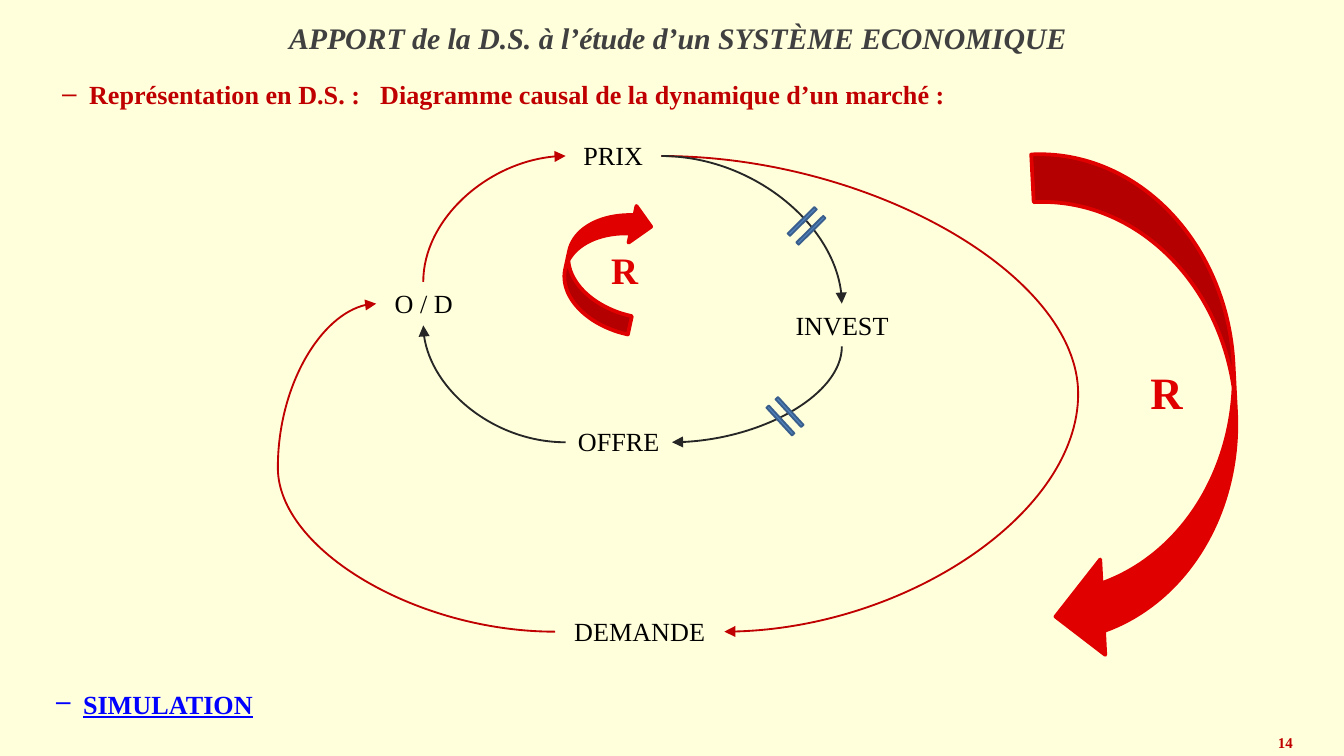
"""Build the slide showing the causal loop diagram of a market."""
from dataclasses import dataclass

from lxml import etree
from pptx import Presentation
from pptx import util as u
from pptx.dml.color import RGBColor
from pptx.enum import shapes, text
from pptx.oxml.ns import qn

FONT = "Times New Roman"
COLORS = {
    "background": "FFFFDC",
    "title": "404040",
    "red": "C00000",
    "loop": "E10000",
    "black": "000000",
    "dark": "262626",
    "link": "0000FF",
    "delay": "4F81BD",
    "delay_line": "3A5F8C",
}


@dataclass
class Box:
    left: float
    top: float
    width: float
    height: float

    def lengths(self):
        return [u.Cm(v) for v in (self.left, self.top, self.width, self.height)]


@dataclass
class Variable:
    name: str
    box: Box


@dataclass
class Influence:
    start: tuple
    end: tuple
    color: str
    rotation: int = 0
    mirrored: bool = False
    bulge: float = 0


@dataclass
class Symbol:
    kind: int
    box: Box
    rotation: float
    fill: str
    line: str
    line_width: float
    adjustments: tuple = ()


VARIABLES = [
    Variable("DEMANDE", Box(10.49, 11.53, 3.2, 0.81)),
    Variable("PRIX", Box(10.69, 2.54, 1.8, 0.81)),
    Variable("OFFRE", Box(10.69, 7.95, 2.01, 0.81)),
    Variable("O / D", Box(7.11, 5.33, 1.8, 0.81)),
    Variable("INVEST", Box(14.91, 5.74, 2.01, 0.81)),
]
INFLUENCES = [
    Influence((12.5, 2.95), (13.69, 11.94), "red", bulge=6.62),
    Influence((10.49, 11.94), (7.11, 5.74), "red", 180, bulge=1.55),
    Influence((10.69, 8.36), (8, 6.15), "dark", 180),
    Influence((8, 5.33), (10.69, 2.95), "red", 90, mirrored=True),
    Influence((12.5, 2.95), (15.91, 5.74), "dark"),
    Influence((15.91, 6.55), (12.7, 8.36), "dark", 90),
]
LOOP = shapes.MSO_SHAPE.CURVED_LEFT_ARROW
DELAY = shapes.MSO_SHAPE.MATH_EQUAL
DELAY_BARS = (0.11, 0.31)
SYMBOLS = [
    Symbol(DELAY, Box(14.35, 7.59, 0.97, 0.56), 47.4, "delay", "delay_line", 1, DELAY_BARS),
    Symbol(DELAY, Box(14.76, 3.99, 0.97, 0.56), 315.3, "delay", "delay_line", 1, DELAY_BARS),
    Symbol(LOOP, Box(19.74, 2.82, 3.61, 9.65), 357, "loop", "loop", 2),
    Symbol(LOOP, Box(10.72, 3.76, 1.42, 2.44), 192.2, "loop", "loop", 2),
]


def rgb(name: str) -> RGBColor:
    return RGBColor.from_string(COLORS[name])


def write(paragraph, content: str, *, size: float, color: str, bold=False,
          italic=False, underline=False, align=text.PP_ALIGN.LEFT, spacing=0):
    """Add a formatted run to a paragraph."""
    paragraph.alignment = align
    run = paragraph.add_run()
    run.text = content
    font = run.font
    font.name, font.size = FONT, u.Pt(size)
    font.bold, font.italic, font.underline = bold, italic, underline
    font.color.rgb = rgb(color)
    if spacing:
        run._r.get_or_add_rPr().set("spc", str(spacing * 100))


def add_text(slide, box: Box, *, wrap=True, inset=None):
    """Add a text box and return its first paragraph."""
    frame = slide.shapes.add_textbox(*box.lengths()).text_frame
    frame.word_wrap = wrap
    if inset is not None:
        frame.margin_left = frame.margin_right = u.Cm(inset)
        frame.margin_top = frame.margin_bottom = u.Cm(inset)
    return frame.paragraphs[0]


def place(placeholder, box: Box):
    """Move a placeholder and return its first paragraph."""
    (placeholder.left, placeholder.top,
     placeholder.width, placeholder.height) = box.lengths()
    placeholder.text_frame.auto_size = text.MSO_AUTO_SIZE.NONE
    return placeholder.text_frame.paragraphs[0]


def add_dash(paragraph):
    """Give a paragraph a hanging dash bullet."""
    paragraph.level = 1
    paragraph.space_before = u.Pt(0)
    properties = paragraph._p.get_or_add_pPr()
    properties.set("marL", str(u.Cm(1.02)))
    properties.set("indent", str(u.Cm(-0.51)))
    etree.SubElement(properties, qn("a:buChar")).set("char", "–")


def draw_influence(slide, influence: Influence):
    """Draw a curved arrow between two points."""
    (x1, y1), (x2, y2) = influence.start, influence.end
    width, height = abs(x2 - x1), abs(y2 - y1)
    if influence.rotation % 180:
        width, height = height, width
    left, top = (x1 + x2 - width) / 2, (y1 + y2 - height) / 2
    corners = [(left, top), (left + width, top + height)]
    if influence.mirrored:
        corners.reverse()
    ends = [u.Cm(value) for corner in corners for value in corner]
    connector = slide.shapes.add_connector(shapes.MSO_CONNECTOR.CURVE, *ends)
    connector.line.color.rgb = rgb(influence.color)
    connector.line.width = u.Pt(1)
    properties = connector._element.spPr
    properties.find(qn("a:xfrm")).set("rot", str(influence.rotation * 60000))
    geometry = properties.find(qn("a:prstGeom"))
    if influence.bulge:
        guide = etree.SubElement(geometry.find(qn("a:avLst")), qn("a:gd"))
        guide.set("name", "adj1")
        guide.set("fmla", f"val {round(influence.bulge * 100000)}")
    else:
        geometry.set("prst", "curvedConnector2")
    line = properties.find(qn("a:ln"))
    etree.SubElement(line, qn("a:tailEnd")).set("type", "triangle")
    etree.SubElement(properties, qn("a:effectLst"))


def draw_symbol(slide, symbol: Symbol):
    """Draw a loop arrow or a delay mark."""
    shape = slide.shapes.add_shape(symbol.kind, *symbol.box.lengths())
    shape.shadow.inherit = False
    shape.rotation = symbol.rotation
    for index, value in enumerate(symbol.adjustments):
        shape.adjustments[index] = value
    shape.fill.solid()
    shape.fill.fore_color.rgb = rgb(symbol.fill)
    shape.line.color.rgb = rgb(symbol.line)
    shape.line.width = u.Pt(symbol.line_width)


def main():
    """Build and save the presentation."""
    presentation = Presentation()
    presentation.slide_width, presentation.slide_height = u.Cm(25.4), u.Cm(14.29)
    slide = presentation.slides.add_slide(presentation.slide_layouts[1])
    slide.background.fill.solid()
    slide.background.fill.fore_color.rgb = rgb("background")
    center = text.PP_ALIGN.CENTER

    title = place(slide.shapes.title, Box(0.51, 0.36, 24.61, 0.69))
    write(title, "APPORT de la D.S. à l’étude d’un SYSTÈME ECONOMIQUE",
          size=16, color="title", bold=True, italic=True, align=center)
    heading = place(slide.placeholders[1], Box(0.41, 1.35, 24.61, 0.79))
    add_dash(heading)
    for content, spacing in (("Représentation en D.S. :", 0), (" ", 7),
                             ("Diagramme causal de la dynamique d’un marché :", 0)):
        write(heading, content, size=14, color="red", bold=True, spacing=spacing)

    for variable in VARIABLES:
        write(add_text(slide, variable.box, inset=0.1), variable.name,
              size=14, color="black", align=center)
    for influence in INFLUENCES:
        draw_influence(slide, influence)
    for symbol in SYMBOLS:
        draw_symbol(slide, symbol)
    for box, size in ((Box(21.49, 6.76, 1.14, 1.27), 24), (Box(11.3, 4.55, 1.04, 1.12), 20)):
        write(add_text(slide, box, wrap=False), "R", size=size, color="loop", bold=True)

    simulation = add_text(slide, Box(0.3, 12.95, 24.61, 0.79))
    add_dash(simulation)
    simulation.line_spacing = 0.9
    write(simulation, "SIMULATION", size=14, color="link", bold=True, underline=True)
    number = add_text(slide, Box(23.7, 13.82, 1.19, 0.46), inset=0.05)
    write(number, "14", size=8, color="red", bold=True, align=center)
    presentation.save("out.pptx")


if __name__ == "__main__":
    main()
